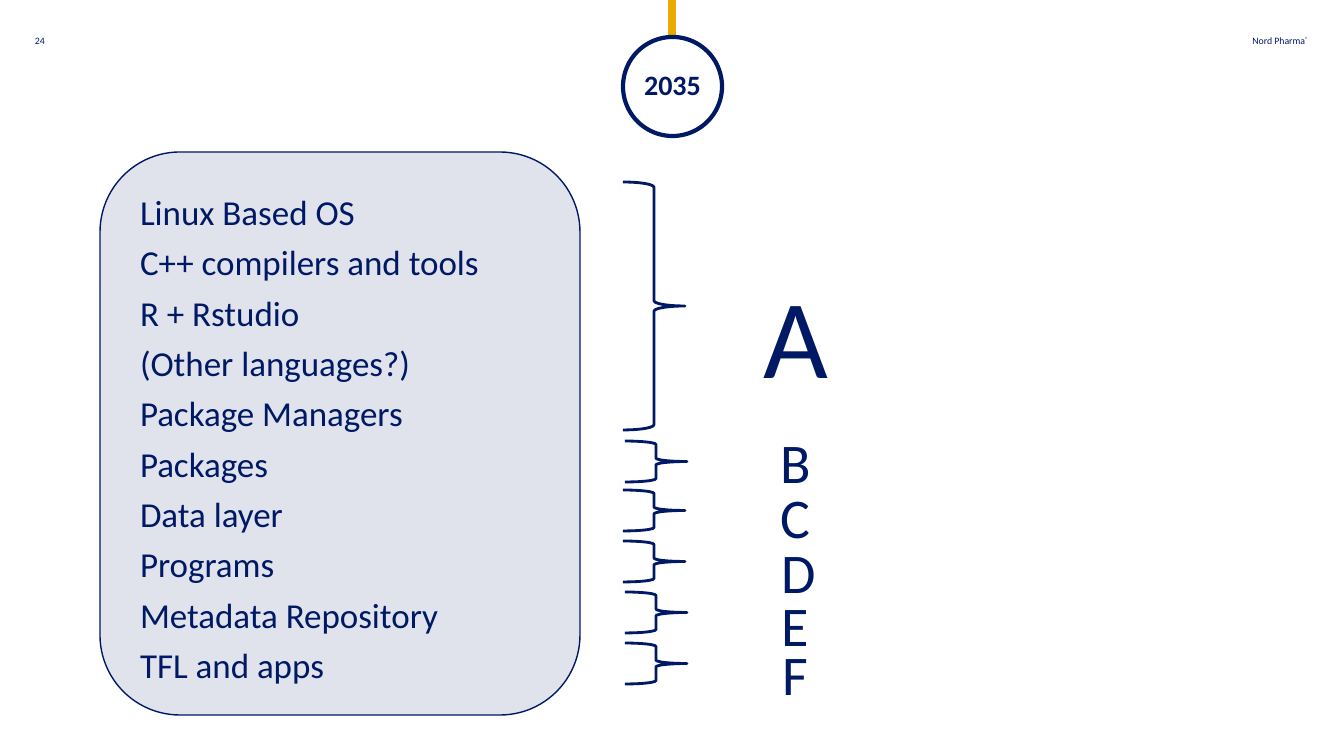
from dataclasses import dataclass

from lxml.etree import SubElement
from pptx import Presentation
from pptx.dml.color import RGBColor
from pptx.enum.shapes import MSO_CONNECTOR, MSO_SHAPE as SHAPE
from pptx.enum.text import MSO_ANCHOR, PP_ALIGN
from pptx.oxml.ns import qn
from pptx.util import Pt

# Content
YEAR = "2035"
PAGE = "24"
COMPANY, MARK = "Nord Pharma", "®"
LAYERS = [
    "Linux Based OS",
    "C++ compilers and tools",
    "R + Rstudio",
    "(Other languages?)",
    "Package Managers",
    "Packages",
    "Data layer",
    "Programs",
    "Metadata Repository",
    "TFL and apps",
]
# letter, letter left, letter top, brace left, brace top (px)
SINGLE_GROUPS = [
    ("B", 752, 414, 625, 441),
    ("C", 752, 469, 623, 490),
    ("D", 755, 524, 623, 541),
    ("E", 752, 577, 625, 592),
    ("F", 752, 626, 625, 643),
]


@dataclass(frozen=True)
class Theme:
    navy: RGBColor = RGBColor(0x00, 0x19, 0x65)
    gold: RGBColor = RGBColor(0xEA, 0xAB, 0x00)
    white: RGBColor = RGBColor(0xFF, 0xFF, 0xFF)
    font: str = "Calibri"
    small: int = 7
    year: int = 20
    body: int = 25
    letter: int = 40
    big_letter: int = 80


T = Theme()
EMU_PER_PX = 914400 / 100.8
BRACE_W, BRACE_H = 62, 41
LETTER_W, LETTER_H = 87, 76


def px(*lengths):
    return [round(n * EMU_PER_PX) for n in lengths]


def write(shape, lines, size, align=PP_ALIGN.LEFT, spacing=None, bold=False):
    tf = shape.text_frame
    tf.word_wrap = True
    tf.margin_left = tf.margin_right = tf.margin_top = tf.margin_bottom = 0
    tf.text = "\n".join(lines)
    for p in tf.paragraphs:
        p.alignment = align
        if spacing:
            p.line_spacing = spacing
        p.font.name = T.font
        p.font.size = Pt(size)
        p.font.bold = bold
        p.font.color.rgb = T.navy
    return tf


def add_text(s, box, lines, size, **style):
    return write(s.shapes.add_textbox(*px(*box)), lines, size, **style)


def add_outlined(s, kind, box, width, fill=None, alpha=None):
    """Navy-outlined shape; alpha is the fill opacity in percent."""
    sp = s.shapes.add_shape(kind, *px(*box))
    sp.shadow.inherit = False
    sp.line.color.rgb = T.navy
    sp.line.width = Pt(width)
    if fill is None:
        sp.fill.background()
    else:
        sp.fill.solid()
        sp.fill.fore_color.rgb = fill
    if alpha:
        color = sp.fill._xPr.find(qn("a:solidFill"))[0]
        SubElement(color, qn("a:alpha")).set("val", str(alpha * 1000))
    return sp


def add_header(s):
    tf = add_text(s, (1207, 35, 101, 13), [COMPANY], T.small, align=PP_ALIGN.RIGHT)
    r = tf.paragraphs[0].add_run()
    r.text = MARK
    r.font._element.set("baseline", "30000")
    add_text(s, (35, 35, 35, 14), [PAGE], T.small)


def add_year(s):
    line = s.shapes.add_connector(MSO_CONNECTOR.STRAIGHT, *px(672, 0, 672, 61))
    line.line.color.rgb = T.gold
    line.line.width = Pt(5.25)
    SubElement(line._element.spPr, qn("a:effectLst"))
    circle = add_outlined(s, SHAPE.OVAL, (623, 37, 99, 99), 3, T.white)
    tf = write(circle, [YEAR], T.year, align=PP_ALIGN.CENTER, spacing=0.9, bold=True)
    tf.vertical_anchor = MSO_ANCHOR.MIDDLE


def add_group(s, letter, letter_box, brace_box, size):
    add_outlined(s, SHAPE.RIGHT_BRACE, brace_box, 2)
    add_text(s, letter_box, [letter], size, align=PP_ALIGN.CENTER, spacing=1.2)


def main():
    prs = Presentation()
    prs.slide_width, prs.slide_height = px(1344, 756)
    s = prs.slides.add_slide(prs.slide_layouts[6])
    add_header(s)
    add_year(s)

    add_outlined(s, SHAPE.ROUNDED_RECTANGLE, (100, 152, 480, 563), 1, T.navy, alpha=12)
    add_text(s, (140, 182, 410, 505), LAYERS, T.body, spacing=1.2)

    add_group(s, "A", (752, 240, LETTER_W, 2 * LETTER_H),
              (623, 182, BRACE_W, 248), T.big_letter)
    for letter, left, top, brace_left, brace_top in SINGLE_GROUPS:
        add_group(s, letter, (left, top, LETTER_W, LETTER_H),
                  (brace_left, brace_top, BRACE_W, BRACE_H), T.letter)
    prs.save("out.pptx")


if __name__ == "__main__":
    main()
